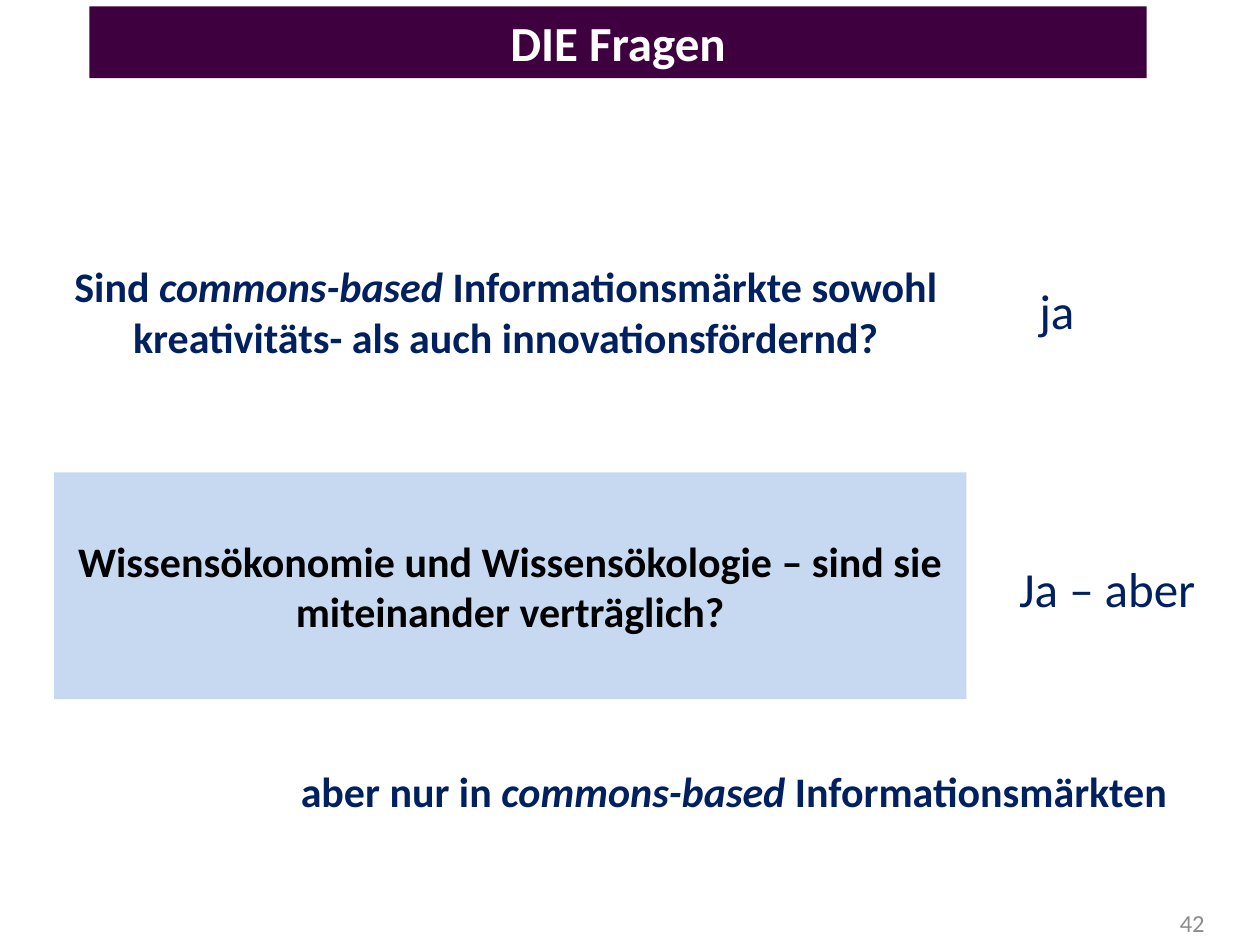
from dataclasses import dataclass

from pptx import Presentation
from pptx.dml.color import RGBColor
from pptx.enum.text import MSO_ANCHOR, MSO_AUTO_SIZE, PP_ALIGN
from pptx.util import Inches, Pt

LEFT, CENTER, RIGHT = PP_ALIGN.LEFT, PP_ALIGN.CENTER, PP_ALIGN.RIGHT
TOP, MIDDLE = MSO_ANCHOR.TOP, MSO_ANCHOR.MIDDLE
NO_AUTOFIT = MSO_AUTO_SIZE.NONE
TITLE_ONLY = 5


@dataclass(frozen=True)
class Theme:
    font: str = "Calibri"
    navy: str = "002060"
    black: str = "000000"
    white: str = "FFFFFF"
    gray: str = "8C8C8C"
    plum: str = "3E003E"
    pale_blue: str = "C6D9F1"
    large: int = 28
    medium: int = 24
    small: int = 14


THEME = Theme()

TITLE = "DIE Fragen"
EMPHASIS = "commons-based "
MARKET_QUESTION = ["Sind ", EMPHASIS,
                   "Informationsmärkte sowohl kreativitäts- als auch innovationsfördernd?"]
MARKET_ANSWER = ["ja"]
ECOLOGY_QUESTION = ["Wissensökonomie und Wissensökologie – sind sie miteinander verträglich?"]
ECOLOGY_ANSWER = ["Ja – aber"]
CONDITION = ["aber nur in ", EMPHASIS, "Informationsmärkten"]
PAGE_NUMBER = ["42"]

QUESTION = dict(size=THEME.medium, color=THEME.navy, bold=True, align=CENTER)
HIGHLIGHT = dict(QUESTION, color=THEME.black, anchor=MIDDLE, fill=THEME.pale_blue)
ANSWER = dict(size=THEME.large, color=THEME.navy)
HEADING = dict(size=THEME.large, color=THEME.white, bold=True, align=CENTER, fill=THEME.plum)
NUMBER = dict(size=THEME.small, color=THEME.gray, align=RIGHT, anchor=MIDDLE)

TITLE_PLACE = (0.71, 0.05, 8.39, 0.57)
BOXES = [
    (MARKET_QUESTION, (0.43, 2.02, 7.17, 0.91), QUESTION),
    (MARKET_ANSWER, (8.15, 2.18, 1.5, 0.57), ANSWER),
    (ECOLOGY_QUESTION, (0.43, 3.75, 7.24, 1.8), HIGHLIGHT),
    (ECOLOGY_ANSWER, (7.99, 4.38, 1.89, 0.57), ANSWER),
    (CONDITION, (2.24, 6.03, 7.17, 0.5), QUESTION),
    (PAGE_NUMBER, (7.33, 7.12, 2.33, 0.4), NUMBER),
]


def write(box, parts, size, color, bold=False, align=LEFT, anchor=TOP, fill=None):
    if fill:
        box.fill.solid()
        box.fill.fore_color.rgb = RGBColor.from_string(fill)
    frame = box.text_frame
    frame.word_wrap = True
    frame.auto_size = NO_AUTOFIT
    frame.vertical_anchor = anchor
    para = frame.paragraphs[0]
    para.alignment = align
    for part in parts:
        span = para.add_run()
        span.text = part
        span.font.name = THEME.font
        span.font.size = Pt(size)
        span.font.bold = bold
        span.font.italic = part == EMPHASIS
        span.font.color.rgb = RGBColor.from_string(color)


def main():
    deck = Presentation()
    deck.slide_width, deck.slide_height = Inches(10), Inches(7.5)
    page = deck.slides.add_slide(deck.slide_layouts[TITLE_ONLY])

    title = page.shapes.title
    title.left, title.top, title.width, title.height = map(Inches, TITLE_PLACE)
    write(title, [TITLE], **HEADING)

    for parts, place, style in BOXES:
        box = page.shapes.add_textbox(*map(Inches, place))
        write(box, parts, **style)

    deck.save("out.pptx")


if __name__ == "__main__":
    main()
